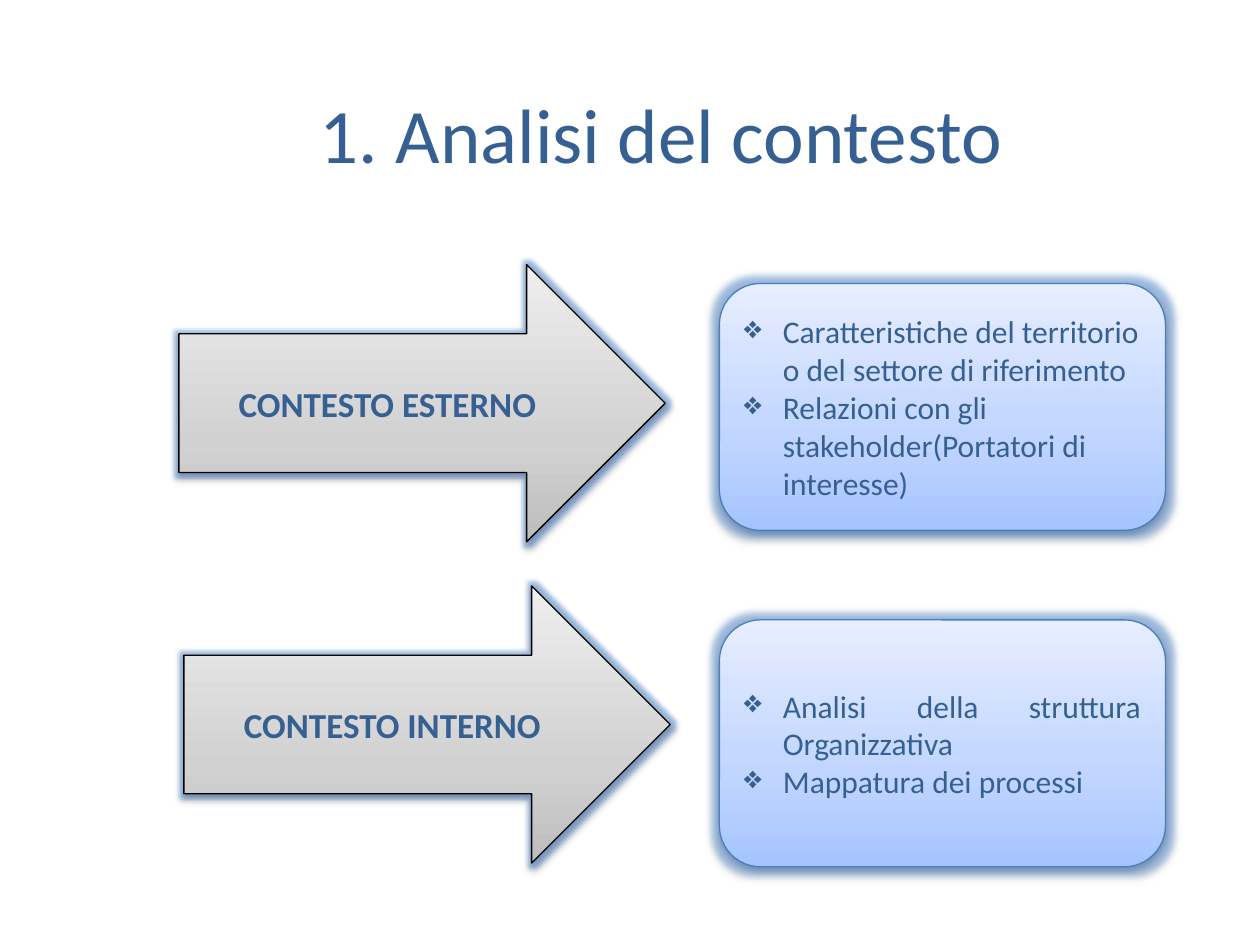
from dataclasses import dataclass

from lxml.etree import SubElement as Sub
from pptx import Presentation
from pptx.dml.color import RGBColor
from pptx.enum.shapes import MSO_SHAPE as Kind
from pptx.enum.text import MSO_ANCHOR as Anchor, PP_ALIGN as Align
from pptx.oxml.ns import qn
from pptx.util import Inches, Pt

INK = "376092"
BLUES = ("A4C4FF", "BFD4FF", "E6EEFF")
GREYS = ("BDBDBD", "D1D1D1", "EEEEEE")
STOPS = (0, 35, 100)


@dataclass
class Row:
    label: str
    points: list[str]
    align: Align
    arrow: tuple[float, float]
    box: tuple[float, float]


ROWS = [
    Row("CONTESTO ESTERNO",
        ["Caratteristiche del territorio o del settore di riferimento",
         "Relazioni con gli stakeholder(Portatori di interesse)"],
        Align.LEFT, (1.42, 2.1), (5.71, 2.25)),
    Row("CONTESTO INTERNO",
        ["Analisi della struttura Organizzativa",
         "Mappatura dei processi"],
        Align.JUSTIFY, (1.46, 4.65), (5.71, 4.92)),
]


def color(code: str) -> RGBColor:
    return RGBColor.from_string(code)


def style(para, size: int, align: Align, bold: bool = False) -> None:
    para.alignment = align
    for run in para.runs:
        font = run.font
        font.name, font.size, font.bold = "Calibri", Pt(size), bold
        font.color.rgb = color(INK)


def tint(parent, code: str, alpha: int = 100) -> None:
    """Add an RGB colour element, with opacity in percent."""
    rgb = Sub(parent, qn("a:srgbClr"), val=code)
    if alpha < 100:
        Sub(rgb, qn("a:alpha"), val=str(alpha * 1000))


def shade(shape, codes: tuple[str, ...]) -> None:
    """Fill with a vertical gradient, first colour at the bottom."""
    shape.fill.gradient()
    shape.fill.gradient_angle = 90
    stops = shape.element.spPr.find(".//" + qn("a:gsLst"))
    for old in list(stops):
        stops.remove(old)
    for pos, code in zip(STOPS, codes):
        tint(Sub(stops, qn("a:gs"), pos=str(pos * 1000)), code)


def glow(shape, radius: float) -> None:
    """Add a blue glow and a soft shadow below."""
    shape.shadow.inherit = False
    effects = shape.element.spPr.find(qn("a:effectLst"))
    tint(Sub(effects, qn("a:glow"), rad=str(Pt(radius))), "3A7FD5", 40)
    drop = Sub(effects, qn("a:outerShdw"), blurRad=str(Pt(3.1)),
               dist=str(Pt(1.6)), dir="5400000", rotWithShape="0")
    tint(drop, "000000", 38)


def panel(slide, kind: Kind, spot: tuple[float, float],
          size: tuple[float, float], codes: tuple[str, ...],
          edge: str, radius: float):
    shape = slide.shapes.add_shape(kind, *map(Inches, spot + size))
    shade(shape, codes)
    shape.line.color.rgb = color(edge)
    shape.line.width = Pt(0.75)
    glow(shape, radius)
    shape.text_frame.word_wrap = True
    shape.text_frame.vertical_anchor = Anchor.MIDDLE
    return shape


def bullet(para) -> None:
    props = para._p.get_or_add_pPr()
    props.set("marL", str(Inches(0.31)))
    props.set("indent", str(-Inches(0.31)))
    Sub(props, qn("a:buChar"), char="❖")


def draw(slide, row: Row) -> None:
    box = panel(slide, Kind.ROUNDED_RECTANGLE, row.box, (3.54, 1.96),
                BLUES, "4B7EBC", 8)
    box.text_frame.text = "\n".join(row.points)
    for para in box.text_frame.paragraphs:
        style(para, 18, row.align)
        bullet(para)
    arrow = panel(slide, Kind.RIGHT_ARROW, row.arrow, (3.86, 2.2),
                  GREYS, "000000", 5)
    arrow.text_frame.text = row.label
    style(arrow.text_frame.paragraphs[0], 20, Align.CENTER, bold=True)


def main() -> None:
    deck = Presentation()
    deck.slide_width, deck.slide_height = Inches(10), Inches(7.5)
    slide = deck.slides.add_slide(deck.slide_layouts[5])
    title = slide.shapes.title
    title.left, title.top = Inches(0.75), Inches(0.36)
    title.width, title.height = Inches(9), Inches(1.38)
    title.text_frame.text = "1. Analisi del contesto"
    title.text_frame.vertical_anchor = Anchor.MIDDLE
    style(title.text_frame.paragraphs[0], 44, Align.CENTER)
    for row in ROWS:
        draw(slide, row)
    deck.save("out.pptx")


if __name__ == "__main__":
    main()
